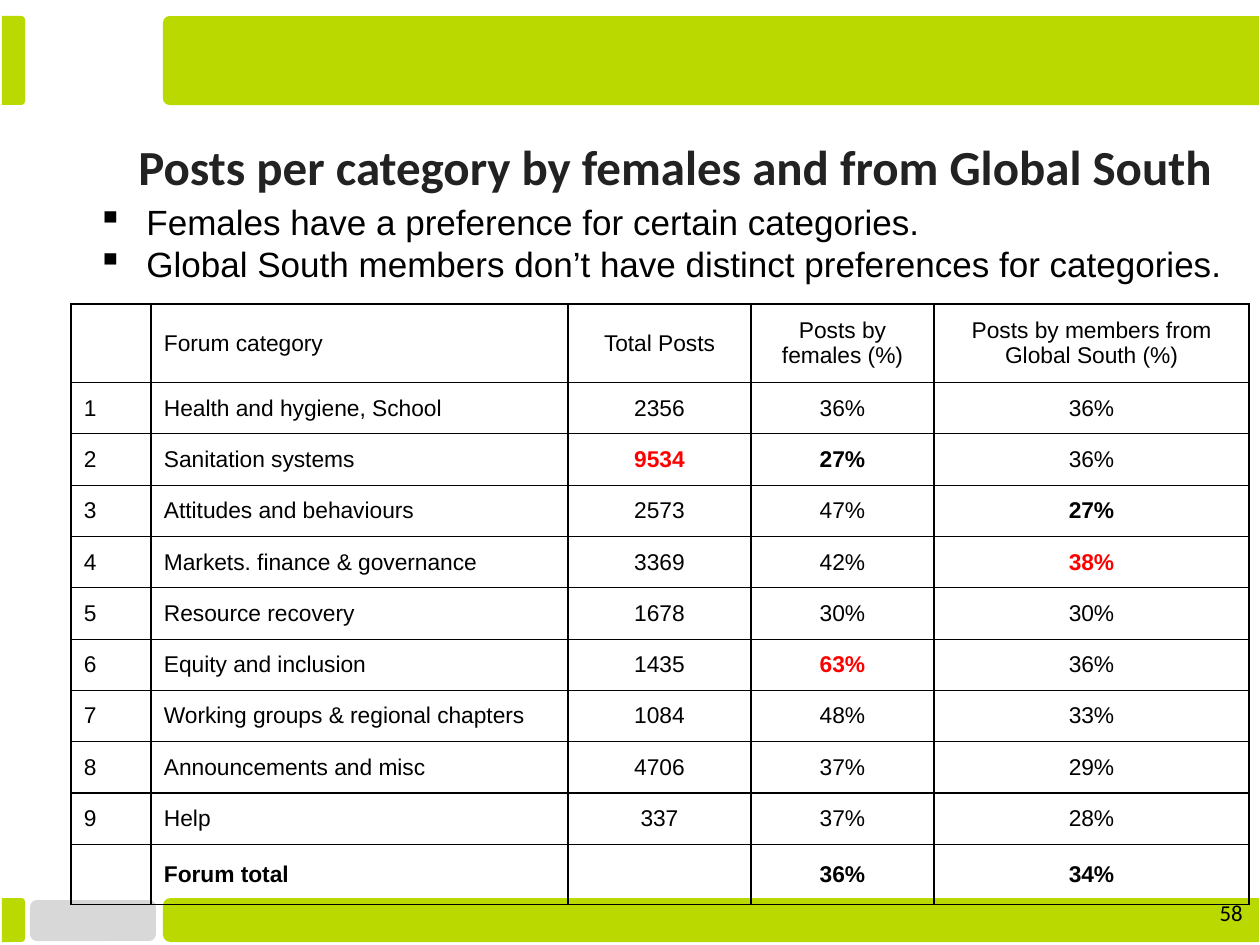
"""Builds the slide on forum posts by females and from the Global South."""
from lxml import etree
from pptx import Presentation
from pptx.dml.color import RGBColor
from pptx.enum.shapes import MSO_SHAPE
from pptx.enum.text import MSO_ANCHOR, PP_ALIGN
from pptx.oxml.ns import qn
from pptx.util import Pt

ROUND, TAB = MSO_SHAPE.ROUNDED_RECTANGLE, MSO_SHAPE.ROUND_2_SAME_RECTANGLE
MIDDLE, TOP = MSO_ANCHOR.MIDDLE, MSO_ANCHOR.TOP
LEFT, CENTER, RIGHT = PP_ALIGN.LEFT, PP_ALIGN.CENTER, PP_ALIGN.RIGHT
COLORS = {"lime": "BAD900", "grey": "D8D8D8", "ink": "000000",
          "title": "222222", "red": "FF0000"}
SCALE = 914400 / 126

TITLE = "Posts per category by females and from Global South"
POINTS = ["Females have a preference for certain categories.",
          "Global South members don’t have distinct preferences for categories."]
NUMBER = "58"
ROWS = [
    ("", "Forum category", "Total Posts", "Posts by females (%)",
     "Posts by members from Global South (%)"),
    ("1", "Health and hygiene, School", "2356", "36%", "36%"),
    ("2", "Sanitation systems", "9534", "27%", "36%"),
    ("3", "Attitudes and behaviours", "2573", "47%", "27%"),
    ("4", "Markets. finance & governance", "3369", "42%", "38%"),
    ("5", "Resource recovery", "1678", "30%", "30%"),
    ("6", "Equity and inclusion", "1435", "63%", "36%"),
    ("7", "Working groups & regional chapters", "1084", "48%", "33%"),
    ("8", "Announcements and misc", "4706", "37%", "29%"),
    ("9", "Help", "337", "37%", "28%"),
    ("", "Forum total", "", "36%", "34%"),
]
PEAKS = {(2, 2), (6, 3), (4, 4)}
LOWS = {(2, 3), (3, 4)}
WIDTHS = [80, 417, 183, 183, 315]
HEAD, BODY, FOOT = 76, 456, 60
BARS = [(163, 898, 1096, 44, 270, 0.167), (2, 16, 23, 89, 90, 0.167),
        (163, 16, 1096, 89, 270, 0.073), (2, 898, 23, 44, 90, 0.167)]


def px(n):
    return round(n * SCALE)


def add_block(slide, kind, box, color, curve):
    block = slide.shapes.add_shape(kind, *map(px, box))
    block.shadow.inherit = False
    block.fill.solid()
    block.fill.fore_color.rgb = RGBColor.from_string(COLORS[color])
    block.line.fill.background()
    block.adjustments[0] = curve
    return block


def add_bar(slide, x, y, wide, high, turn, curve):
    left, top = x + (wide - high) / 2, y + (high - wide) / 2
    add_block(slide, TAB, (left, top, high, wide), "lime", curve).rotation = turn


def style(para, size, face="Arial", color="ink", bold=False, align=LEFT):
    para.alignment = align
    font = para.font
    font.size, font.name, font.bold = Pt(size), face, bold
    font.color.rgb = RGBColor.from_string(COLORS[color])


def add_text(slide, box, lines, anchor=TOP):
    frame = slide.shapes.add_textbox(*map(px, box)).text_frame
    frame.word_wrap = True
    frame.vertical_anchor = anchor
    frame.text = "\n".join(lines)
    return frame.paragraphs


def add_bullet(para):
    props = para._p.get_or_add_pPr()
    props.set("marL", str(px(63)))
    props.set("indent", str(px(-49)))
    etree.SubElement(props, qn("a:buChar"), char="▪")


def add_border(cell):
    props = cell._tc.get_or_add_tcPr()
    for side in "LRTB":
        line = etree.SubElement(props, qn(f"a:ln{side}"), w=str(Pt(0.75)))
        fill = etree.SubElement(line, qn("a:solidFill"))
        etree.SubElement(fill, qn("a:srgbClr"), val=COLORS["ink"])


def fill_cell(cell, text, row, col):
    add_border(cell)
    cell.fill.background()
    cell.vertical_anchor = MIDDLE
    tight = col == 3 and row > 0
    cell.margin_left = cell.margin_right = px(4 if tight else 13)
    cell.margin_top = cell.margin_bottom = px(3 if tight else 12)
    cell.text = text
    peak = (row, col) in PEAKS
    bold = peak or (row, col) in LOWS or row == len(ROWS) - 1
    style(cell.text_frame.paragraphs[0], 13, color="red" if peak else "ink",
          bold=bold, align=CENTER if col > 1 else LEFT)


def add_grid(slide):
    box = (71, 304, sum(WIDTHS), HEAD + BODY + FOOT)
    table = slide.shapes.add_table(len(ROWS), len(WIDTHS), *map(px, box)).table
    table.first_row = table.horz_banding = False
    for column, width in zip(table.columns, WIDTHS):
        column.width = px(width)
    count = len(ROWS) - 2
    for row, high in zip(table.rows, [HEAD] + [BODY / count] * count + [FOOT]):
        row.height = px(high)
    for r, row in enumerate(ROWS):
        for c, text in enumerate(row):
            fill_cell(table.cell(r, c), text, r, c)


def main():
    deck = Presentation()
    deck.slide_width, deck.slide_height = px(1260), px(945)
    slide = deck.slides.add_slide(deck.slide_layouts[6])
    add_block(slide, ROUND, (30, 900, 126, 41), "grey", 0.167)
    for bar in BARS:
        add_bar(slide, *bar)
    for para in add_text(slide, (71, 194, 1240, 634), POINTS):
        add_bullet(para)
        style(para, 20)
    title = add_text(slide, (126, 125, 1129, 79), [TITLE], MIDDLE)[0]
    title.line_spacing, title.space_after = 1.06, Pt(9)
    style(title, 28, "Calibri", "title", True)
    number = add_text(slide, (1179, 893, 76, 72), [NUMBER])[0]
    style(number, 13, "Calibri", align=RIGHT)
    add_grid(slide)
    deck.save("out.pptx")


if __name__ == "__main__":
    main()
